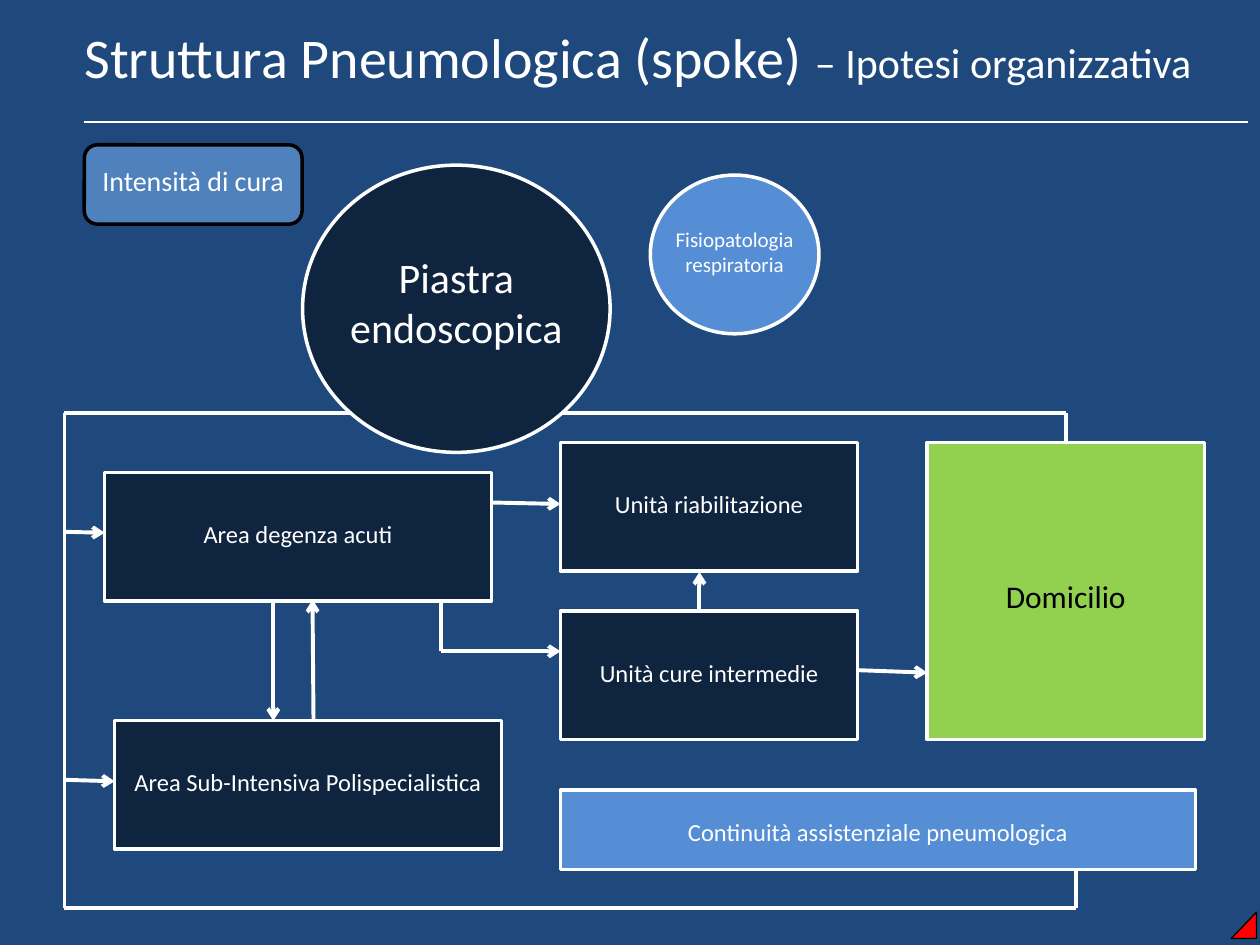
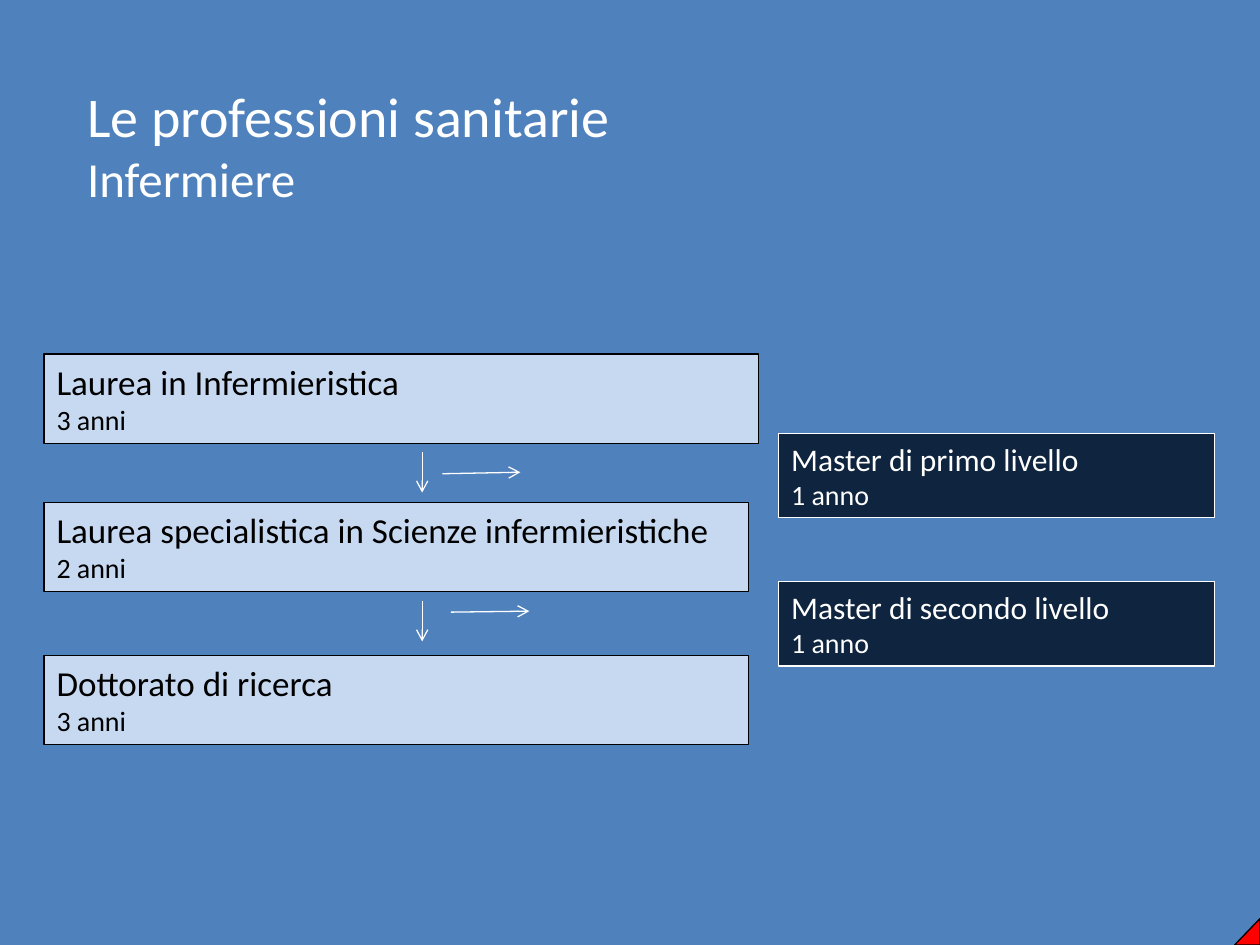
from dataclasses import dataclass
from itertools import pairwise
from typing import NamedTuple

import pptx
import pptx.dml.color
import pptx.enum.shapes
import pptx.enum.text
import pptx.oxml.ns
import pptx.shapes.autoshape
import pptx.slide
import pptx.text.text
import pptx.util
from lxml import etree

Cm = pptx.util.Cm
Preset = pptx.enum.shapes.MSO_SHAPE
Align = pptx.enum.text.PP_ALIGN
Anchor = pptx.enum.text.MSO_ANCHOR


# Theme: colours as hex strings, sizes and line widths in points
@dataclass(frozen=True)
class Theme:
    font: str = "Calibri"
    deep_blue: str = "1F497D"
    mid_blue: str = "4F81BD"
    sky: str = "558ED5"
    pale: str = "C6D9F1"
    navy: str = "0F243E"
    green: str = "92D050"
    red: str = "FF0000"
    white: str = "FFFFFF"
    black: str = "000000"
    title: int = 32
    subtitle: int = 28
    heading: int = 24
    degree: int = 20
    large: int = 18
    medium: int = 16
    body: int = 14
    small: int = 12
    thin: float = 0.75
    border: float = 2
    flow: float = 2.25


THEME = Theme()


# Repeated elements; every length is in centimetres
class Box(NamedTuple):
    left: float
    top: float
    width: float
    height: float


class Piece(NamedTuple):
    """A run of title text with its size."""
    text: str
    size: int


@dataclass(frozen=True)
class Unit:
    """A care unit: an outlined shape with a centred label."""
    label: str
    box: Box
    fill: str = THEME.navy
    size: int = THEME.body
    preset: Preset = Preset.RECTANGLE
    ink: str = THEME.white
    outline: str = THEME.white
    drop: float = -0.06  # offset of the label below the middle


@dataclass(frozen=True)
class Course:
    """A course with its duration on a second line."""
    name: str
    duration: str
    box: Box
    fill: str = THEME.pale
    ink: str = THEME.black
    size: int = THEME.degree


@dataclass(frozen=True)
class Route:
    """Straight segments through the points, with an optional arrowhead."""
    points: tuple[tuple[float, float], ...]
    arrow: bool = True
    width: float = THEME.flow


def colour(value: str) -> pptx.dml.color.RGBColor:
    return pptx.dml.color.RGBColor.from_string(value)


def format_runs(paragraph: pptx.text.text._Paragraph, size: int, ink: str) -> None:
    for run in paragraph.runs:
        run.font.name = THEME.font
        run.font.size = pptx.util.Pt(size)
        run.font.color.rgb = colour(ink)


def draw_shape(slide: pptx.slide.Slide, preset: Preset, box: Box, fill: str,
               outline: str, width: float) -> pptx.shapes.autoshape.Shape:
    shape = slide.shapes.add_shape(preset, *map(Cm, box))
    shape.shadow.inherit = False
    shape.fill.solid()
    shape.fill.fore_color.rgb = colour(fill)
    shape.line.color.rgb = colour(outline)
    shape.line.width = pptx.util.Pt(width)
    return shape


def draw_unit(slide: pptx.slide.Slide, unit: Unit) -> None:
    shape = draw_shape(slide, unit.preset, unit.box, unit.fill, unit.outline, THEME.border)
    frame = shape.text_frame
    frame.text = unit.label
    frame.word_wrap = "\n" not in unit.label
    frame.vertical_anchor = Anchor.MIDDLE
    frame.margin_left = frame.margin_right = 0
    frame.margin_top = Cm(max(0, 2 * unit.drop))
    frame.margin_bottom = Cm(max(0, -2 * unit.drop))
    for paragraph in frame.paragraphs:
        paragraph.alignment = Align.CENTER
        format_runs(paragraph, unit.size, unit.ink)


def draw_course(slide: pptx.slide.Slide, course: Course) -> None:
    shape = draw_shape(slide, Preset.RECTANGLE, course.box, course.fill, course.ink, THEME.thin)
    frame = shape.text_frame
    frame.text = f"{course.name}\n{course.duration}"
    frame.word_wrap = True
    frame.vertical_anchor = Anchor.TOP
    for paragraph, size in zip(frame.paragraphs, (course.size, THEME.medium)):
        paragraph.alignment = Align.LEFT
        format_runs(paragraph, size, course.ink)


def draw_route(slide: pptx.slide.Slide, route: Route) -> None:
    for start, end in pairwise(route.points):
        segment = slide.shapes.add_connector(
            pptx.enum.shapes.MSO_CONNECTOR.STRAIGHT, *map(Cm, start + end))
        segment.line.color.rgb = colour(THEME.white)
        segment.line.width = pptx.util.Pt(route.width)
        properties = segment._element.spPr
        if route.arrow and end == route.points[-1]:
            etree.SubElement(segment.line._get_or_add_ln(),
                             pptx.oxml.ns.qn("a:tailEnd"), type="arrow")
        etree.SubElement(properties, pptx.oxml.ns.qn("a:effectLst"))


def draw_corner(slide: pptx.slide.Slide, left: float, top: float) -> None:
    corner = draw_shape(slide, Preset.RIGHT_TRIANGLE, Box(left, top, 0.51, 0.53),
                        THEME.red, THEME.black, THEME.thin)
    corner._element.spPr.xfrm.set("flipH", "1")


def start_slide(deck: pptx.presentation.Presentation, background: str, box: Box,
                title_lines: tuple[tuple[Piece, ...], ...]) -> pptx.slide.Slide:
    slide = deck.slides.add_slide(deck.slide_layouts[5])
    slide.background.fill.solid()
    slide.background.fill.fore_color.rgb = colour(background)
    title = slide.shapes.title
    title.left, title.top, title.width, title.height = map(Cm, box)
    frame = title.text_frame
    frame.text = "\n".join(line[0].text for line in title_lines)
    frame.word_wrap = True
    frame.auto_size = pptx.enum.text.MSO_AUTO_SIZE.NONE
    frame.vertical_anchor = Anchor.TOP
    for paragraph, line in zip(frame.paragraphs, title_lines):
        paragraph.alignment = Align.LEFT
        for piece in line[1:]:
            paragraph.add_run().text = piece.text
        format_runs(paragraph, line[0].size, THEME.white)
        for run, piece in zip(paragraph.runs, line):
            run.font.size = pptx.util.Pt(piece.size)
    return slide


# Slide 1: care units and the patient routes between them
WARD = (7.8, 2.59)
STEP_DOWN = (5.99, 2.59)
RETURN_X = 1.3

WARDS = (
    Unit("Area Sub-Intensiva Polispecialistica", Box(2.31, 14.53, *WARD)),
    Unit("Area degenza acuti", Box(2.11, 9.53, *WARD)),
    Unit("Unità cure intermedie", Box(11.3, 12.32, *STEP_DOWN)),
    Unit("Unità riabilitazione", Box(11.3, 8.92, *STEP_DOWN)),
    Unit("Continuità assistenziale pneumologica", Box(11.3, 15.93, 12.8, 1.6),
         THEME.sky, drop=0.04),
    Unit("Fisiopatologia\nrespiratoria", Box(13.11, 3.53, 3.4, 3.2), THEME.sky,
         THEME.small, Preset.OVAL),
)
ROUTES = (
    Route(((14.1, 12.32), (14.1, 11.53))),
    Route(((5.51, 12.12), (5.51, 14.53))),
    Route(((6.32, 14.53), (6.3, 12.09))),
    Route(((8.89, 12.12), (8.89, 13.13), (11.3, 13.13))),
    Route(((9.91, 10.13), (11.3, 10.16))),
    Route(((17.3, 13.51), (18.69, 13.56))),
    # Return line from home and continuity of care back to the wards
    Route(((21.49, 9.32), (21.49, 8.33), (RETURN_X, 8.33), (RETURN_X, 18.31),
           (21.69, 18.31), (21.69, 17.53)), arrow=False),
    Route(((RETURN_X, 10.72), (2.11, 10.74))),
    Route(((RETURN_X, 15.72), (2.31, 15.75))),
    # Rule under the title
    Route(((1.7, 2.46), (25.15, 2.46)), arrow=False, width=THEME.thin),
)
FRONT_UNITS = (
    Unit("Domicilio", Box(18.69, 8.92, 5.59, 5.99), THEME.green, THEME.large,
         ink=THEME.black, drop=0.1),
    Unit("Piastra endoscopica", Box(6.1, 3.33, 6.2, 5.79), size=THEME.heading,
         preset=Preset.OVAL, drop=-0.14),
    Unit("Intensità di cura", Box(1.7, 2.92, 4.39, 1.6), THEME.mid_blue, THEME.medium,
         Preset.ROUNDED_RECTANGLE, outline=THEME.black, drop=-0.08),
)


def build_structure(deck: pptx.presentation.Presentation) -> None:
    slide = start_slide(deck, THEME.deep_blue, Box(1.45, 0.33, 23.8, 1.63), (
        (Piece("Struttura Pneumologica (spoke) ", THEME.title),
         Piece("– Ipotesi organizzativa", THEME.heading)),))
    for unit in WARDS:
        draw_unit(slide, unit)
    for route in ROUTES:
        draw_route(slide, route)
    for unit in FRONT_UNITS:
        draw_unit(slide, unit)
    draw_corner(slide, 24.82, 18.39)


# Slide 2: degrees on the left, masters on the right
MASTER = (8.79, 1.7)

COURSES = (
    Course("Laurea in Infermieristica", "3 anni", Box(0.89, 7.14, 14.4, 1.8)),
    Course("Laurea specialistica in Scienze infermieristiche", "2 anni",
           Box(0.89, 10.13, 14.2, 1.8)),
    Course("Dottorato di ricerca", "3 anni", Box(0.89, 13.21, 14.2, 1.8)),
    Course("Master di primo livello", "1 anno", Box(15.7, 8.74, *MASTER),
           THEME.navy, THEME.white, THEME.large),
    Course("Master di secondo livello", "1 anno", Box(15.7, 11.73, *MASTER),
           THEME.navy, THEME.white, THEME.large),
)
PROGRESSIONS = (
    ((8.51, 9.12), (8.51, 9.93)),
    ((8.51, 12.12), (8.51, 12.93)),
    ((8.92, 9.55), (10.49, 9.52)),
    ((9.09, 12.34), (10.67, 12.32)),
)


def build_professions(deck: pptx.presentation.Presentation) -> None:
    slide = start_slide(deck, THEME.mid_blue, Box(1.5, 1.52, 23.9, 4.19), (
        (Piece("Le professioni sanitarie", THEME.title),),
        (Piece("Infermiere", THEME.subtitle),)))
    for course in COURSES:
        draw_course(slide, course)
    for points in PROGRESSIONS:
        draw_route(slide, Route(points, width=THEME.thin))
    draw_corner(slide, 24.89, 18.52)


def main() -> None:
    deck = pptx.Presentation()
    deck.slide_width, deck.slide_height = Cm(25.4), Cm(19.05)
    build_structure(deck)
    build_professions(deck)
    deck.save("out.pptx")


if __name__ == "__main__":
    main()
